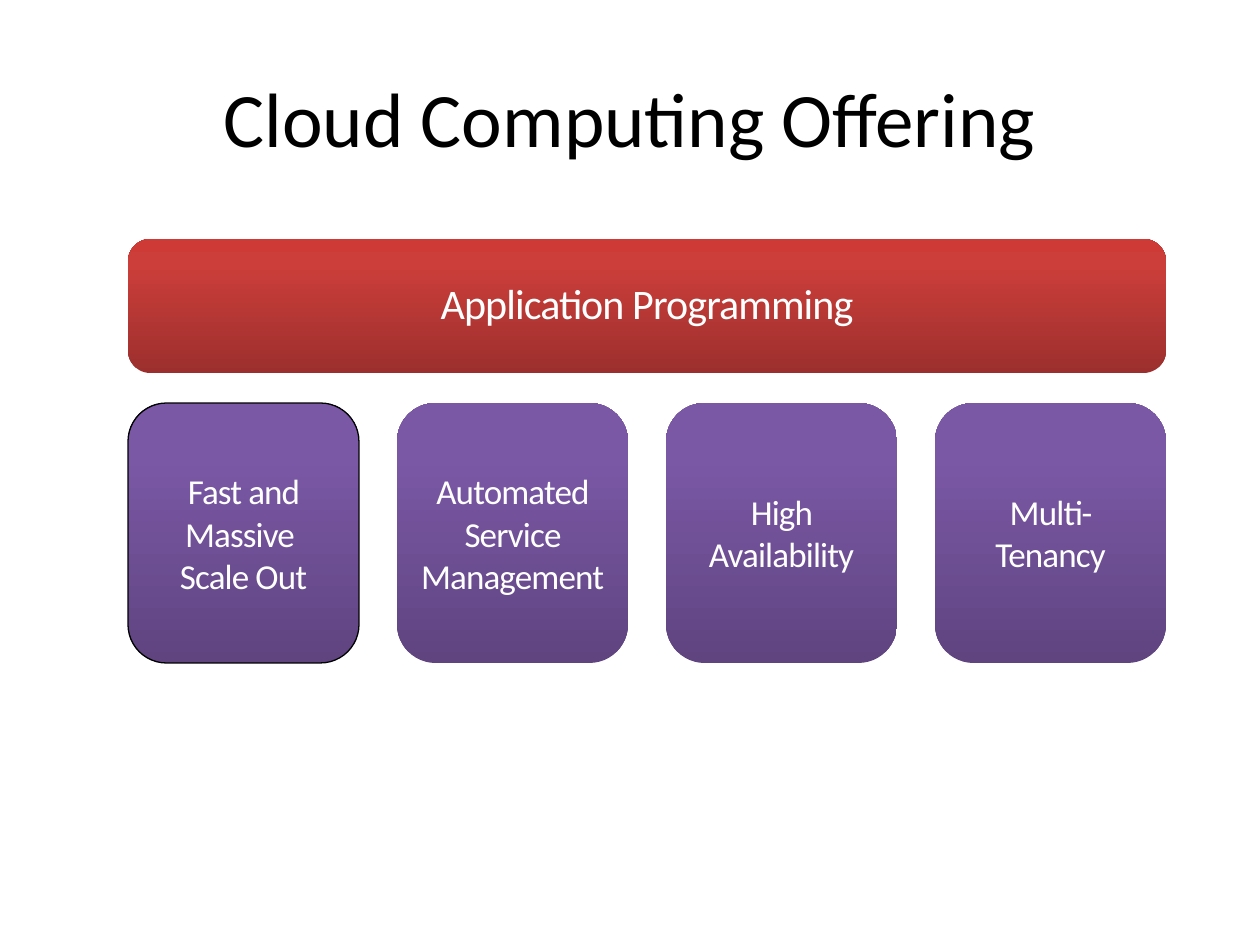
from copy import deepcopy
from dataclasses import dataclass

from pptx import Presentation
from pptx.dml.color import RGBColor
from pptx.enum.shapes import MSO_SHAPE
from pptx.enum.text import MSO_ANCHOR, PP_ALIGN
from pptx.oxml.ns import qn
from pptx.slide import Slide
from pptx.text.text import TextFrame
from pptx.util import Emu, Pt

ROUNDED = MSO_SHAPE.ROUNDED_RECTANGLE
MIDDLE = MSO_ANCHOR.MIDDLE
CENTER = PP_ALIGN.CENTER
PX_PER_INCH = 126
BLANK_LAYOUT = 6


@dataclass(frozen=True)
class Theme:
    font: str = "Calibri"
    title_size: int = 44
    bar_size: int = 24
    column_size: int = 20
    black: str = "000000"
    white: str = "FFFFFF"
    red: tuple[str, ...] = ("9C2F2D", "CB3E3A", "CE3B37")
    purple: tuple[str, ...] = ("5F4480", "7B58A6", "7C57A8")
    stop_positions: tuple[float, ...] = (0, 0.8, 1)
    tracking: int = -50


@dataclass(frozen=True)
class Box:
    left: int
    top: int
    width: int
    height: int

    def emu(self) -> tuple[Emu, ...]:
        return tuple(px(n) for n in (self.left, self.top, self.width, self.height))


@dataclass(frozen=True)
class Panel:
    text: str
    box: Box
    colors: tuple[str, ...]
    size: int
    line_spacing: float = 1.0
    outlined: bool = False


THEME = Theme()
TITLE_BOX = Box(63, 38, 1134, 158)
BAR_BOX = Box(128, 239, 1038, 134)
COLUMN_TOP, COLUMN_WIDTH, COLUMN_HEIGHT = 403, 231, 260
COLUMN_TEXTS = (
    "Fast and Massive \nScale Out",
    "Automated Service Management",
    "High Availability",
    "Multi-Tenancy",
)


def px(length: int) -> Emu:
    return Emu(round(length * 914400 / PX_PER_INCH))


def write_text(frame: TextFrame, text: str, size: int, color: str,
               tracking: int = 0, line_spacing: float = 1.0) -> None:
    frame.word_wrap = True
    frame.vertical_anchor = MIDDLE
    paragraph = frame.paragraphs[0]
    paragraph.text = text
    paragraph.alignment = CENTER
    paragraph.line_spacing = line_spacing
    for run in paragraph.runs:
        run.font.name = THEME.font
        run.font.size = Pt(size)
        run.font.color.rgb = RGBColor.from_string(color)
        if tracking:
            run.font._element.set("spc", str(tracking))


def draw_title(slide: Slide, text: str) -> None:
    shape = slide.shapes.add_textbox(*TITLE_BOX.emu())
    write_text(shape.text_frame, text, THEME.title_size, THEME.black)


def draw_panel(slide: Slide, panel: Panel) -> None:
    shape = slide.shapes.add_shape(ROUNDED, *panel.box.emu())
    shape.shadow.inherit = False
    shape.fill.gradient()
    shape.fill.gradient_angle = 90
    stop_list = shape._element.spPr.find(qn("a:gradFill")).find(qn("a:gsLst"))
    stop_list.append(deepcopy(stop_list[-1]))
    for stop, position, color in zip(shape.fill.gradient_stops, THEME.stop_positions, panel.colors):
        stop.position = position
        stop.color.rgb = RGBColor.from_string(color)
    if panel.outlined:
        shape.line.color.rgb = RGBColor.from_string(THEME.black)
        shape.line.width = Pt(0.75)
    else:
        shape.line.fill.background()
    write_text(shape.text_frame, panel.text, panel.size, THEME.white,
               THEME.tracking, panel.line_spacing)


def build_panels() -> list[Panel]:
    pitch = (BAR_BOX.width - COLUMN_WIDTH) // (len(COLUMN_TEXTS) - 1)
    columns = [
        Panel(
            text,
            Box(BAR_BOX.left + index * pitch, COLUMN_TOP, COLUMN_WIDTH, COLUMN_HEIGHT),
            THEME.purple,
            THEME.column_size,
            outlined=index == 0,
        )
        for index, text in enumerate(COLUMN_TEXTS)
    ]
    bar = Panel("Application Programming", BAR_BOX, THEME.red, THEME.bar_size, line_spacing=0.9)
    return [bar, *columns]


def main() -> None:
    """Build the cloud computing offering slide."""
    presentation = Presentation()
    presentation.slide_width = px(1260)
    presentation.slide_height = px(945)
    slide = presentation.slides.add_slide(presentation.slide_layouts[BLANK_LAYOUT])
    draw_title(slide, "Cloud Computing Offering")
    for panel in build_panels():
        draw_panel(slide, panel)
    presentation.save("out.pptx")


if __name__ == "__main__":
    main()
